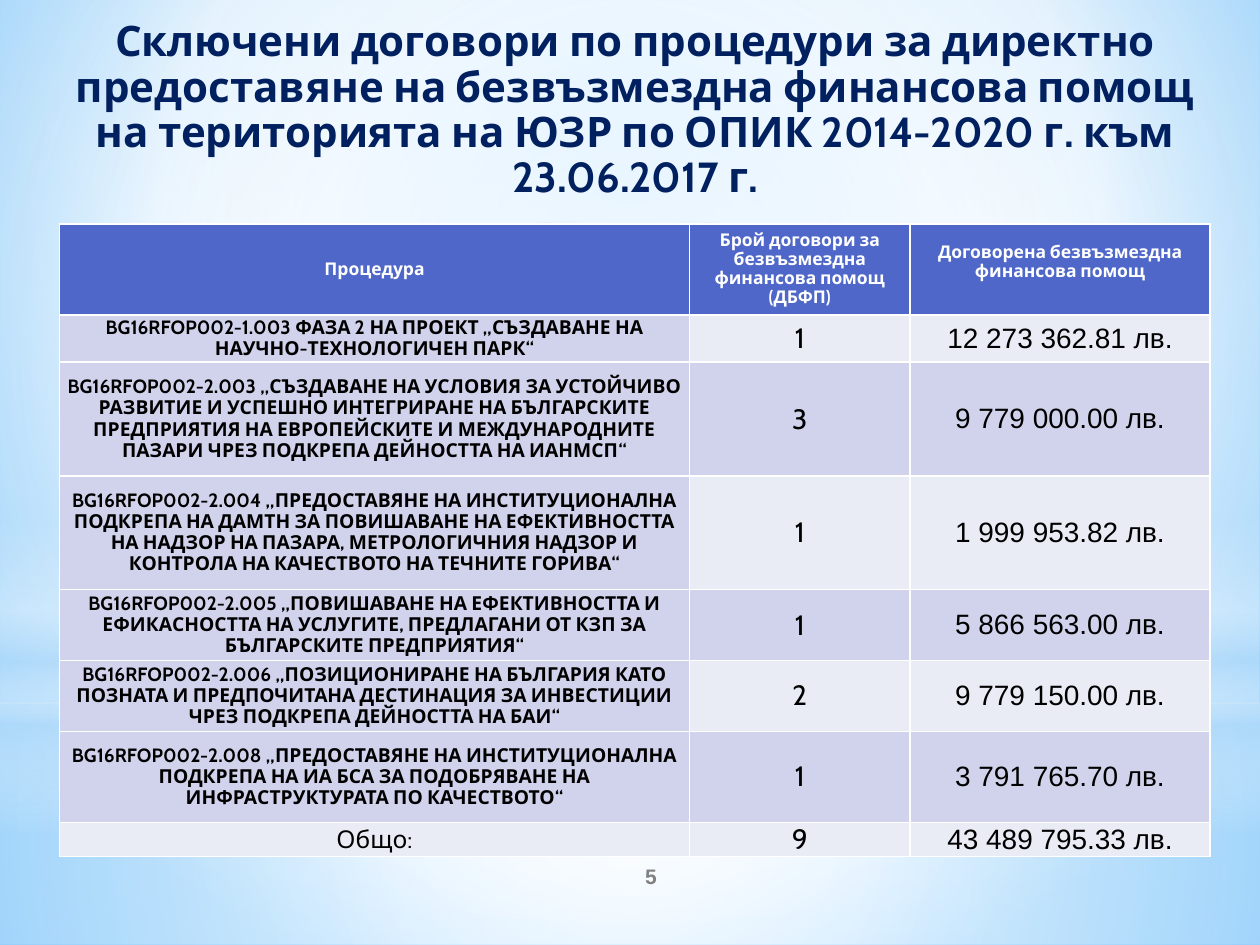
from dataclasses import dataclass

from pptx import Presentation, oxml
from pptx.dml.color import RGBColor
from pptx.enum import shapes, text
from pptx.oxml import ns
from pptx.util import Pt


@dataclass(frozen=True)
class Theme:
    """Colours, fonts and type sizes of the slide."""
    navy: str = "002060"
    white: str = "FFFFFF"
    black: str = "000000"
    gray: str = "808080"
    header: str = "4E67C8"
    band_dark: str = "D0D3EB"
    band_light: str = "E9EBF5"
    sky: str = "B4DCFA"
    body: str = "Cabin"
    figures: str = "Arial"
    title_size: int = 24
    header_size: int = 10
    procedure_size: int = 11
    total_size: int = 14
    figure_size: int = 16
    page_size: int = 12
    tight: float = 0.9


THEME = Theme()
TITLE = ("Сключени договори по процедури за директно предоставяне на безвъзмездна "
         "финансова помощ на територията на ЮЗР по ОПИК 2014-2020 г. към 23.06.2017 г.")
HEADINGS = ["Процедура", "Брой договори за безвъзмездна финансова помощ (ДБФП)",
            "Договорена безвъзмездна финансова помощ"]
CONTRACTS = [
    ("BG16RFOP002-1.003 ФАЗА 2 НА ПРОЕКТ „СЪЗДАВАНЕ НА НАУЧНО-ТЕХНОЛОГИЧЕН ПАРК“",
     "1", "12 273 362.81 лв."),
    ("BG16RFOP002-2.003 „СЪЗДАВАНЕ НА УСЛОВИЯ ЗА УСТОЙЧИВО РАЗВИТИЕ И УСПЕШНО "
     "ИНТЕГРИРАНЕ НА БЪЛГАРСКИТЕ ПРЕДПРИЯТИЯ НА ЕВРОПЕЙСКИТЕ И МЕЖДУНАРОДНИТЕ "
     "ПАЗАРИ ЧРЕЗ ПОДКРЕПА ДЕЙНОСТТА НА ИАНМСП“", "3", "9 779 000.00 лв."),
    ("BG16RFOP002-2.004 „ПРЕДОСТАВЯНЕ НА ИНСТИТУЦИОНАЛНА ПОДКРЕПА НА ДАМТН ЗА "
     "ПОВИШАВАНЕ НА ЕФЕКТИВНОСТТА НА НАДЗОР НА ПАЗАРА, МЕТРОЛОГИЧНИЯ НАДЗОР И "
     "КОНТРОЛА НА КАЧЕСТВОТО НА ТЕЧНИТЕ ГОРИВА“", "1", "1 999 953.82 лв."),
    ("BG16RFOP002-2.005 „ПОВИШАВАНЕ НА ЕФЕКТИВНОСТТА И ЕФИКАСНОСТТА НА УСЛУГИТЕ, "
     "ПРЕДЛАГАНИ ОТ КЗП ЗА БЪЛГАРСКИТЕ ПРЕДПРИЯТИЯ“", "1", "5 866 563.00 лв."),
    ("BG16RFOP002-2.006 „ПОЗИЦИОНИРАНЕ НА БЪЛГАРИЯ КАТО ПОЗНАТА И ПРЕДПОЧИТАНА "
     "ДЕСТИНАЦИЯ ЗА ИНВЕСТИЦИИ ЧРЕЗ ПОДКРЕПА ДЕЙНОСТТА НА БАИ“",
     "2", "9 779 150.00 лв."),
    ("BG16RFOP002-2.008 „ПРЕДОСТАВЯНЕ НА ИНСТИТУЦИОНАЛНА ПОДКРЕПА НА ИА БСА ЗА "
     "ПОДОБРЯВАНЕ НА ИНФРАСТРУКТУРАТА ПО КАЧЕСТВОТО“", "1", "3 791 765.70 лв."),
]
TOTAL = ("Общо:", "9", "43 489 795.33 лв.")
COLUMN_WIDTHS = [360, 126, 171.5]
ROW_HEIGHTS = [52, 27, 65, 65, 40.5, 40.5, 52, 19.4]
CENTRE = (50, 50, 50, 50)


def write(frame, words, size, color, font, bold=False, spacing=1.0):
    """Write one centred run into a text frame."""
    frame.word_wrap = True
    frame.vertical_anchor = text.MSO_ANCHOR.MIDDLE
    paragraph = frame.paragraphs[0]
    paragraph.alignment = text.PP_ALIGN.CENTER
    paragraph.line_spacing = spacing
    run = paragraph.add_run()
    run.text = words
    run.font.size, run.font.bold, run.font.name = Pt(size), bold, font
    run.font.color.rgb = RGBColor.from_string(color)


def set_gradient(properties, stops, focus=None):
    """Swap an empty fill for a circular gradient, or a vertical one without focus."""
    stop_xml = "".join(
        f'<a:gs pos="{at * 1000}"><a:srgbClr val="{color}">'
        f'<a:alpha val="{alpha * 1000}"/></a:srgbClr></a:gs>'
        for at, color, alpha in stops)
    if focus:
        sides = " ".join(f'{side}="{value * 1000}"' for side, value in zip("ltrb", focus))
        course = f'<a:path path="circle"><a:fillToRect {sides}/></a:path>'
    else:
        course = '<a:lin ang="5400000" scaled="0"/>'
    gradient = oxml.parse_xml(
        f'<a:gradFill {ns.nsdecls("a")} rotWithShape="1">'
        f'<a:gsLst>{stop_xml}</a:gsLst>{course}</a:gradFill>')
    empty = properties.find(ns.qn("a:noFill"))
    properties.replace(empty, gradient)


def add_glow(slide, kind, box, stops, focus=None):
    """Add one borderless gradient shape of the backdrop."""
    glow = slide.shapes.add_shape(kind, *map(Pt, box))
    glow.shadow.inherit = False
    glow.fill.background()
    set_gradient(glow.element.spPr, stops, focus)
    glow.line.fill.background()


def add_backdrop(slide, box):
    """Paint the sky background and its layers of light."""
    left, top, width, height = box
    white, sky = THEME.white, THEME.sky
    horizon = top + 401.75
    slide.background.fill.background()
    set_gradient(slide.element.xpath(".//p:bgPr")[0],
                 [(0, "9ED5FF", 100), (60, white, 100), (100, "5BB9FF", 100)],
                 (20, 10, 20, 60))
    rectangle = shapes.MSO_SHAPE.RECTANGLE
    add_glow(slide, rectangle, (left, horizon, width, top + height - horizon),
             [(0, white, 91), (37, white, 76), (100, sky, 79)], CENTRE)
    add_glow(slide, rectangle, (left, top, width, horizon - top),
             [(0, white, 89), (48, white, 62), (100, sky, 79)], CENTRE)
    add_glow(slide, rectangle, (left, top + 297, width, 180),
             [(0, white, 0), (29, white, 30), (45, sky, 40),
              (55, white, 26), (65, sky, 60), (100, white, 0)])
    add_glow(slide, shapes.MSO_SHAPE.OVAL, (left, top + 126, width, 401.75),
             [(0, white, 100), (56, white, 0)], CENTRE)


def place_title(slide, box):
    """Move the title placeholder in front of the backdrop and fill it."""
    title = slide.shapes.title
    title.element.getparent().append(title.element)
    title.left, title.top, title.width, title.height = map(Pt, box)
    title.text_frame.auto_size = text.MSO_AUTO_SIZE.NONE
    write(title.text_frame, TITLE, THEME.title_size, THEME.navy, THEME.body, True,
          THEME.tight)


def add_page_number(slide, box):
    """Add the page number."""
    page = slide.shapes.add_textbox(*map(Pt, box))
    write(page.text_frame, "5", THEME.page_size, THEME.gray, THEME.figures, True)


def format_cell(cell, fill, sides="LRTB"):
    """Give a cell its fill, white borders and no margins."""
    cell.fill.solid()
    cell.fill.fore_color.rgb = RGBColor.from_string(fill)
    cell.margin_left = cell.margin_right = cell.margin_top = cell.margin_bottom = 0
    cell.vertical_anchor = text.MSO_ANCHOR.MIDDLE
    properties = cell._tc.get_or_add_tcPr()
    for position, side in enumerate(sides):
        properties.insert(position, oxml.parse_xml(
            f'<a:ln{side} {ns.nsdecls("a")} w="{Pt(1)}"><a:solidFill>'
            f'<a:srgbClr val="{THEME.white}"/></a:solidFill></a:ln{side}>'))


def cell_style(row, column, last):
    """Return the fill and the text style of a cell by its place."""
    band = THEME.band_light if row % 2 else THEME.band_dark
    if row == 0:
        return THEME.header, (THEME.header_size, THEME.white, THEME.body, True, THEME.tight)
    if column:
        font = THEME.body if column == 1 else THEME.figures
        return band, (THEME.figure_size, THEME.black, font)
    if row == last:
        return band, (THEME.total_size, THEME.black, THEME.body)
    return THEME.band_dark, (THEME.procedure_size, THEME.black, THEME.body, True,
                             THEME.tight)


def add_contracts(slide, left, top):
    """Add the table of contracts by procedure with its total."""
    rows = [HEADINGS, *CONTRACTS, TOTAL]
    last = len(rows) - 1
    table = slide.shapes.add_table(
        len(rows), len(HEADINGS), Pt(left), Pt(top),
        Pt(sum(COLUMN_WIDTHS)), Pt(sum(ROW_HEIGHTS))).table
    for column, width in zip(table.columns, COLUMN_WIDTHS):
        column.width = Pt(width)
    for row, height in zip(table.rows, ROW_HEIGHTS):
        row.height = Pt(height)
    for r, entries in enumerate(rows):
        for c, words in enumerate(entries):
            cell = table.cell(r, c)
            fill, style = cell_style(r, c, last)
            format_cell(cell, fill, "LRT" if (r, c) == (last, 0) else "LRTB")
            write(cell.text_frame, words, *style)
    table.cell(0, 2).margin_bottom = Pt(8)


def main():
    """Build and save the slide."""
    deck = Presentation()
    deck.slide_width, deck.slide_height = Pt(720), Pt(540)
    slide = deck.slides.add_slide(deck.slide_layouts[5])
    add_backdrop(slide, (0, 0, 720, 540))
    add_page_number(slide, (300, 486, 144, 29))
    place_title(slide, (20, 9.5, 686, 108))
    add_contracts(slide, 34, 128)
    deck.save("out.pptx")


if __name__ == "__main__":
    main()
